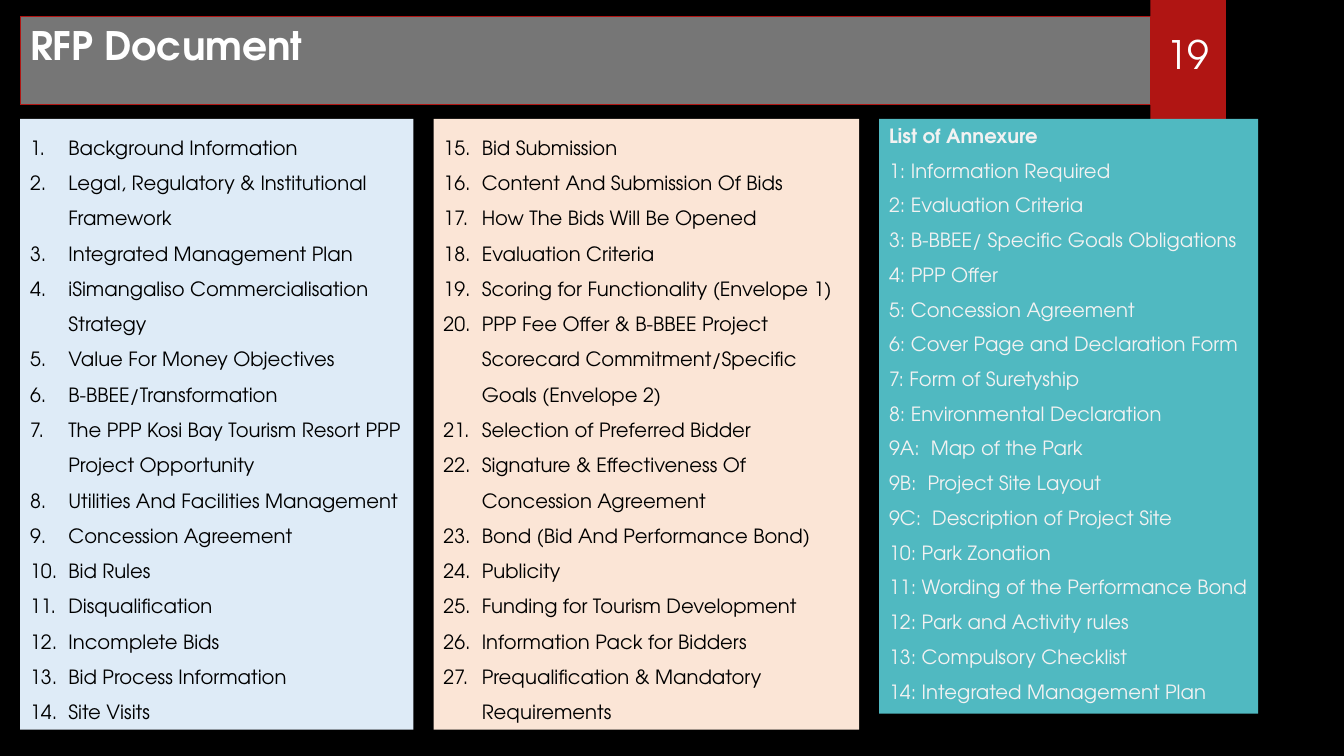
from lxml.etree import SubElement
from pptx import Presentation
from pptx.dml.color import RGBColor
from pptx.enum.shapes import MSO_SHAPE
from pptx.enum.text import MSO_ANCHOR, PP_ALIGN
from pptx.oxml.ns import qn
from pptx.util import Emu, Pt

EMU_PER_PX = 9144  # 100 px to the inch
BLACK, WHITE, RED = "000000", "FFFFFF", "B01513"

CHAPTERS_1_TO_14 = [
    "Background Information",
    "Legal, Regulatory & Institutional Framework",
    "Integrated Management Plan",
    "iSimangaliso Commercialisation Strategy",
    "Value For Money Objectives",
    "B-BBEE/Transformation",
    "The PPP Kosi Bay Tourism Resort PPP Project Opportunity",
    "Utilities And Facilities Management",
    "Concession Agreement",
    "Bid Rules",
    "Disqualification",
    "Incomplete Bids",
    "Bid Process Information",
    "Site Visits",
]
CHAPTERS_15_TO_27 = [
    "Bid Submission",
    "Content And Submission Of Bids",
    "How The Bids Will Be Opened",
    "Evaluation Criteria",
    "Scoring for Functionality (Envelope 1)",
    "PPP Fee Offer & B-BBEE Project Scorecard Commitment/Specific Goals (Envelope 2)",
    "Selection of Preferred Bidder",
    "Signature & Effectiveness Of Concession Agreement",
    "Bond (Bid And Performance Bond)",
    "Publicity",
    "Funding for Tourism Development",
    "Information Pack for Bidders",
    "Prequalification & Mandatory Requirements",
]
ANNEXURES = [
    "1: Information Required",
    "2: Evaluation Criteria",
    "3: B-BBEE/ Specific Goals Obligations",
    "4: PPP Offer",
    "5: Concession Agreement",
    "6: Cover Page and Declaration Form",
    "7: Form of Suretyship",
    "8: Environmental Declaration",
    "9A:  Map of the Park",
    "9B:  Project Site Layout",
    "9C:  Description of Project Site",
    "10: Park Zonation",
    "11: Wording of the Performance Bond",
    "12: Park and Activity rules",
    "13: Compulsory Checklist",
    "14: Integrated Management Plan",
]


def px(length):
    return Emu(length * EMU_PER_PX)


def color(hex_string):
    return RGBColor.from_string(hex_string)


def number_paragraph(paragraph, start, indent=38):
    properties = paragraph._p.get_or_add_pPr()
    properties.set("marL", str(px(indent)))
    properties.set("indent", str(-px(indent)))
    numbering = SubElement(properties, qn("a:buAutoNum"), type="arabicPeriod")
    if start > 1:
        numbering.set("startAt", str(start))


def write(frame, text, first=False, size=14, ink=BLACK, bold=False,
          align=PP_ALIGN.LEFT, spacing=None, after=None, start=None):
    paragraph = frame.paragraphs[0] if first else frame.add_paragraph()
    paragraph.alignment = align
    if spacing:
        paragraph.line_spacing = spacing
    if after:
        paragraph.space_after = Pt(after)
    if start:
        number_paragraph(paragraph, start)
    run = paragraph.add_run()
    run.text = text
    run.font.name = SlideBuilder.FONT
    run.font.size = Pt(size)
    run.font.bold = bold
    run.font.color.rgb = color(ink)


class SlideBuilder:
    FONT = "TeX Gyre Adventor"

    def __init__(self, slide):
        self.slide = slide

    def background(self, fill):
        self.slide.background.fill.solid()
        self.slide.background.fill.fore_color.rgb = color(fill)

    def panel(self, left, top, width, height, fill, outline=None):
        shape = self.slide.shapes.add_shape(
            MSO_SHAPE.RECTANGLE, px(left), px(top), px(width), px(height))
        shape.shadow.inherit = False
        shape.fill.solid()
        shape.fill.fore_color.rgb = color(fill)
        if outline:
            shape.line.color.rgb = color(outline)
            shape.line.width = Pt(0.75)
        else:
            shape.line.fill.background()
        frame = shape.text_frame
        frame.word_wrap = True
        frame.vertical_anchor = MSO_ANCHOR.TOP
        return frame

    def label(self, left, top, width, height, text, **style):
        box = self.slide.shapes.add_textbox(px(left), px(top), px(width), px(height))
        frame = box.text_frame
        frame.word_wrap = True
        frame.vertical_anchor = MSO_ANCHOR.BOTTOM
        write(frame, text, first=True, **style)

    def numbered_panel(self, left, width, fill, items, start):
        frame = self.panel(left, 118, width, 606, fill)
        for index, item in enumerate(items):
            write(frame, item, first=index == 0, spacing=1.5, start=start)

    def annexure_panel(self, left, width, fill, heading, items):
        frame = self.panel(left, 118, width, 590, fill)
        style = dict(ink="F2F2F2", align=PP_ALIGN.JUSTIFY, after=8)
        write(frame, heading, first=True, bold=True, **style)
        for item in items:
            write(frame, item, **style)


def main():
    deck = Presentation()
    deck.slide_width, deck.slide_height = px(1333), px(750)
    builder = SlideBuilder(deck.slides.add_slide(deck.slide_layouts[6]))
    builder.background(BLACK)

    # Header: page tab, title bar, page number
    builder.panel(1141, 0, 75, 125, RED)
    title = builder.panel(20, 16, 1121, 88, "767676", outline=RED)
    write(title, "RFP Document", first=True, size=28, ink=WHITE, bold=True)
    builder.label(1132, 32, 92, 50, "19", size=28, ink=WHITE, align=PP_ALIGN.CENTER)

    # Chapters of the document
    builder.numbered_panel(20, 390, "DEEBF7", CHAPTERS_1_TO_14, start=1)
    builder.numbered_panel(430, 422, "FBE5D6", CHAPTERS_15_TO_27, start=15)

    # Annexures
    builder.annexure_panel(872, 376, "50B9C1", "List of Annexure", ANNEXURES)

    deck.save("out.pptx")


if __name__ == "__main__":
    main()
